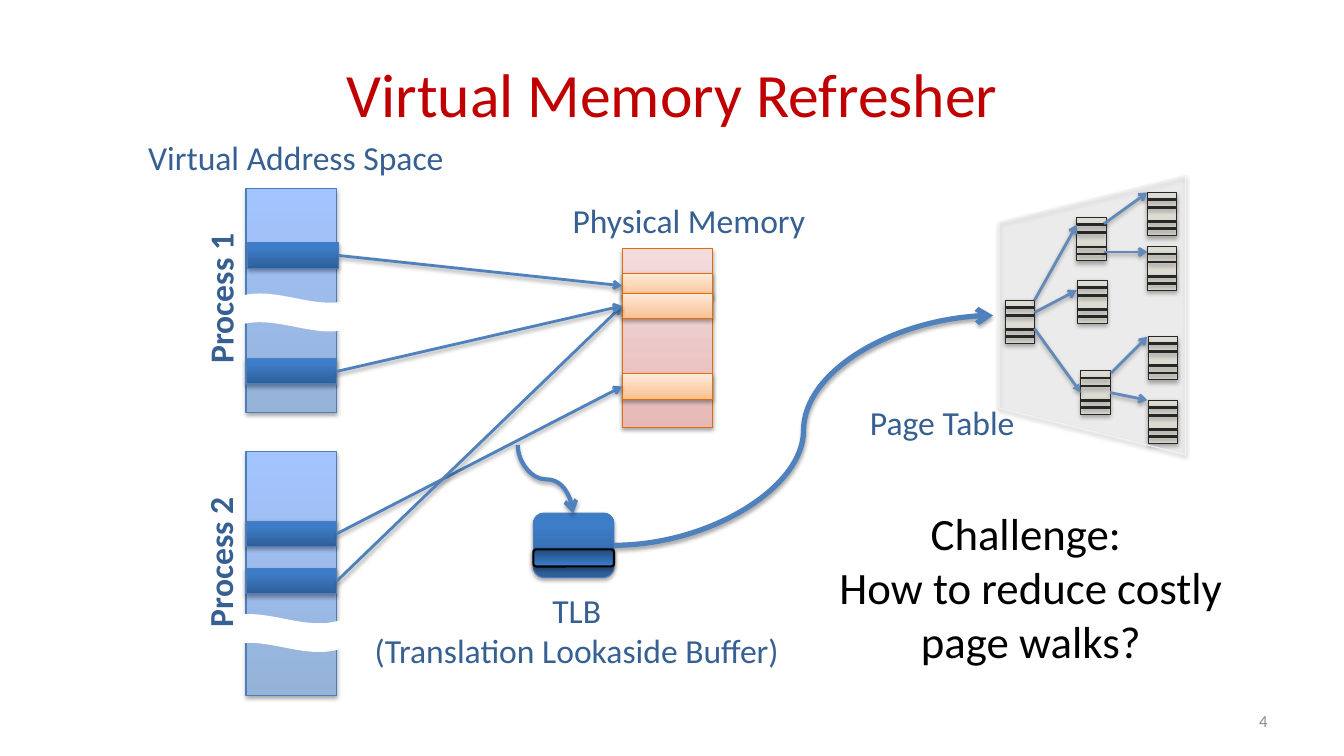
from lxml import etree
from pptx import Presentation
from pptx import util as u
from pptx.dml.color import RGBColor
from pptx.enum import shapes, text
from pptx.oxml import ns

FONT = "Calibri"
RED = RGBColor(0xC0, 0x00, 0x00)
NAVY = RGBColor(0x37, 0x60, 0x92)
BLUE = RGBColor(0x4F, 0x81, 0xBD)
EDGE = RGBColor(0x4B, 0x7E, 0xBC)
ORANGE = RGBColor(0xE4, 0x6C, 0x0A)
BLACK = RGBColor(0, 0, 0)
WHITE = RGBColor(0xFF, 0xFF, 0xFF)
GREY = RGBColor(0x8C, 0x8C, 0x8C)
CREAM = RGBColor(0xEE, 0xEC, 0xE1)
PANEL = RGBColor(0xD9, 0xD9, 0xD9)
PANEL_EDGE = RGBColor(0xF2, 0xF2, 0xF2)
# Gradients: bottom colour, top colour, position of the top colour
SPACE = (RGBColor(0x95, 0xB3, 0xD7), RGBColor(0xA4, 0xC4, 0xFF), 1)
MEMORY = (RGBColor(0xE6, 0xB9, 0xB8), RGBColor(0xF2, 0xDC, 0xDB), 1)
PAGE = (RGBColor(0x2F, 0x5F, 0x99), RGBColor(0x3D, 0x7C, 0xC7), 0.8)
FRAME = (RGBColor(0xFA, 0xC0, 0x90), RGBColor(0xFD, 0xEA, 0xDA), 1)
ENTRY = (RGBColor(0x3F, 0x80, 0xCE), RGBColor(0x1F, 0x49, 0x7D), 1)

KIND = shapes.MSO_SHAPE
LINE = shapes.MSO_CONNECTOR
ALIGN = text.PP_ALIGN
TOP, LEFT, BOTTOM, RIGHT = range(4)


class Deck:
    def __init__(self):
        self.prs = Presentation()
        self.prs.slide_width = u.Inches(13.33)
        self.prs.slide_height = u.Inches(7.5)
        self.s = self.prs.slides.add_slide(self.prs.slide_layouts[5])

    def shadow(self, sp):
        """Give a shape or connector a soft shadow straight below."""
        pr = sp._element.spPr
        effects = pr.find(ns.qn("a:effectLst"))
        if effects is None:
            effects = etree.SubElement(pr, ns.qn("a:effectLst"))
        shade = etree.SubElement(effects, ns.qn("a:outerShdw"), blurRad="39400",
                                 dist="23000", dir="5400000", rotWithShape="0")
        color = etree.SubElement(shade, ns.qn("a:srgbClr"), val="000000")
        etree.SubElement(color, ns.qn("a:alpha"), val="35000")

    def style(self, tf, size, color, align=None, bold=False):
        for p in tf.paragraphs:
            p.alignment = align
            for r in p.runs:
                r.font.name, r.font.size, r.font.bold = FONT, u.Pt(size), bold
                r.font.color.rgb = color

    def title(self, words):
        sp = self.s.shapes.title
        sp.left, sp.top, sp.width, sp.height = map(u.Inches, (0.67, 0.3, 12, 1.25))
        sp.text_frame.text = words
        sp.text_frame.vertical_anchor = text.MSO_ANCHOR.MIDDLE
        self.style(sp.text_frame, 44, RED, ALIGN.CENTER)

    def label(self, box, words, size=24, color=NAVY, align=ALIGN.LEFT,
              bold=False, turn=0, wrap=False, anchor=text.MSO_ANCHOR.TOP):
        sp = self.s.shapes.add_textbox(*map(u.Inches, box))
        sp.rotation = turn
        tf = sp.text_frame
        tf.word_wrap = wrap
        tf.vertical_anchor = anchor
        tf.text = words
        self.style(tf, size, color, align, bold)

    def shape(self, box, fill, edge=None, kind=KIND.RECTANGLE, weight=0.75):
        sp = self.s.shapes.add_shape(kind, *map(u.Inches, box))
        sp.shadow.inherit = False
        if isinstance(fill, RGBColor):
            sp.fill.solid()
            sp.fill.fore_color.rgb = fill
        else:
            sp.fill.gradient()
            sp.fill.gradient_angle = 90
            low, high = sp.fill.gradient_stops
            low.color.rgb, high.color.rgb = fill[:2]
            low.position, high.position = 0, fill[2]
        if edge is None:
            sp.line.fill.background()
        else:
            sp.line.color.rgb = edge
            sp.line.width = u.Pt(weight)
            self.shadow(sp)
        return sp

    def line(self, start, end, color=BLUE, weight=2, head=None, kind=LINE.STRAIGHT):
        """Draw a line; an end is a point or a (shape, side) pair."""
        glued = [isinstance(e[1], int) and hasattr(e[0], "shape_id") for e in (start, end)]
        points = [(0, 0) if g else e for g, e in zip(glued, (start, end))]
        c = self.s.shapes.add_connector(kind, *(u.Inches(v) for xy in points for v in xy))
        if glued[0]:
            c.begin_connect(*start)
        if glued[1]:
            c.end_connect(*end)
        c.line.color.rgb = color
        c.line.width = u.Pt(weight)
        if head:
            etree.SubElement(c.line._get_or_add_ln(), ns.qn("a:tailEnd"), type=head)
        self.shadow(c)
        return c

    def table_node(self, x, y):
        """Draw one page-table node with its four entries."""
        sp = self.shape((x, y, 0.29, 0.43), CREAM, BLACK)
        for dy in (0.07, 0.15, 0.29, 0.36):
            self.line((x, y + dy), (x + 0.29, y + dy), BLACK)
        return sp


def main():
    d = Deck()
    d.title("Virtual Memory Refresher")
    d.label((9.56, 6.95, 3.11, 0.4), "4", 12, GREY, ALIGN.RIGHT, wrap=True,
            anchor=text.MSO_ANCHOR.MIDDLE)

    # Address spaces and physical memory
    for y, h in ((1.87, 2.22), (4.48, 2.42)):
        d.shape((2.44, y, 0.9, h), SPACE, EDGE)
    d.shape((6.17, 2.47, 0.9, 1.77), MEMORY, ORANGE)
    pages = [d.shape((x, y, 0.9, 0.25), PAGE, EDGE)
             for x, y in ((2.46, 2.41), (2.44, 3.56), (2.44, 5.17), (2.44, 5.64))]
    frames = [d.shape((6.17, y, 0.9, 0.25), FRAME, ORANGE) for y in (2.71, 2.91, 3.71)]

    # Page-to-frame mappings
    for page, frame in ((2, 2), (3, 1), (1, 1), (0, 0)):
        d.line((pages[page], RIGHT), (frames[frame], LEFT), head="arrow")

    # Translation buffer
    tlb = d.shape((5.29, 5.09, 0.8, 0.64), PAGE, EDGE, KIND.ROUNDED_RECTANGLE)
    d.shape((5.29, 5.45, 0.8, 0.17), ENTRY, BLACK, KIND.ROUNDED_RECTANGLE, 1.5)
    d.label((3.43, 5.8, 4.58, 0.91), "TLB\n(Translation Lookaside Buffer)",
            align=ALIGN.CENTER)

    # Gaps in the address spaces
    for x, y in ((2.32, 2.91), (2.21, 6.09)):
        d.shape((x, y, 1.21, 0.38), WHITE, kind=KIND.WAVE)

    # Labels
    d.label((1.37, 2.64, 1.63, 0.5), "Process 1", bold=True, turn=270)
    d.label((1.36, 5.25, 1.64, 0.5), "Process 2", bold=True, turn=270)
    d.label((1.37, 1.31, 3.39, 0.5), "Virtual Address Space")
    d.label((5.58, 1.93, 2.71, 0.5), "Physical Memory")

    # Page table tree
    nodes = [d.table_node(x, y) for x, y in (
        (9.97, 2.98), (10.68, 2.16), (10.69, 2.78), (10.72, 3.68),
        (11.38, 1.91), (11.38, 2.45), (11.39, 3.97), (11.39, 3.34))]
    d.line((10.26, 3.26), (nodes[3], LEFT), head="triangle")
    for start, end in (((10.26, 2.98), (10.68, 2.23)), ((10.26, 3.1), (10.68, 2.88)),
                       ((10.95, 2.22), (11.38, 1.91)), ((10.95, 2.5), (11.38, 2.5)),
                       ((11.02, 3.7), (11.38, 3.34))):
        d.line(start, end, head="arrow")
    d.line((nodes[3], RIGHT), (11.38, 3.97), head="arrow")
    panel = d.shape((9.45, 2.2, 2.77, 1.85), PANEL, PANEL_EDGE, KIND.TRAPEZOID)
    panel.rotation = 270
    tint = panel._element.spPr.find(ns.qn("a:solidFill"))[0]
    etree.SubElement(tint, ns.qn("a:alpha"), val="18000")

    # Lookup path through the buffer to the page table
    d.line((tlb, RIGHT), (9.85, 3.13), weight=3.75, head="arrow", kind=LINE.CURVE)
    d.label((8.53, 3.94, 1.73, 0.5), "Page Table")
    d.label((8.03, 4.97, 4.39, 2.09), "Challenge: \vHow to reduce costly page walks?",
            32, BLACK, ALIGN.CENTER, wrap=True)
    lookup = d.line((5.75, 4.48), (5.07, 5.03), weight=3, head="arrow", kind=LINE.CURVE)
    lookup._element.spPr.find(ns.qn("a:xfrm")).set("rot", "16200000")

    d.prs.save("out.pptx")


if __name__ == "__main__":
    main()
